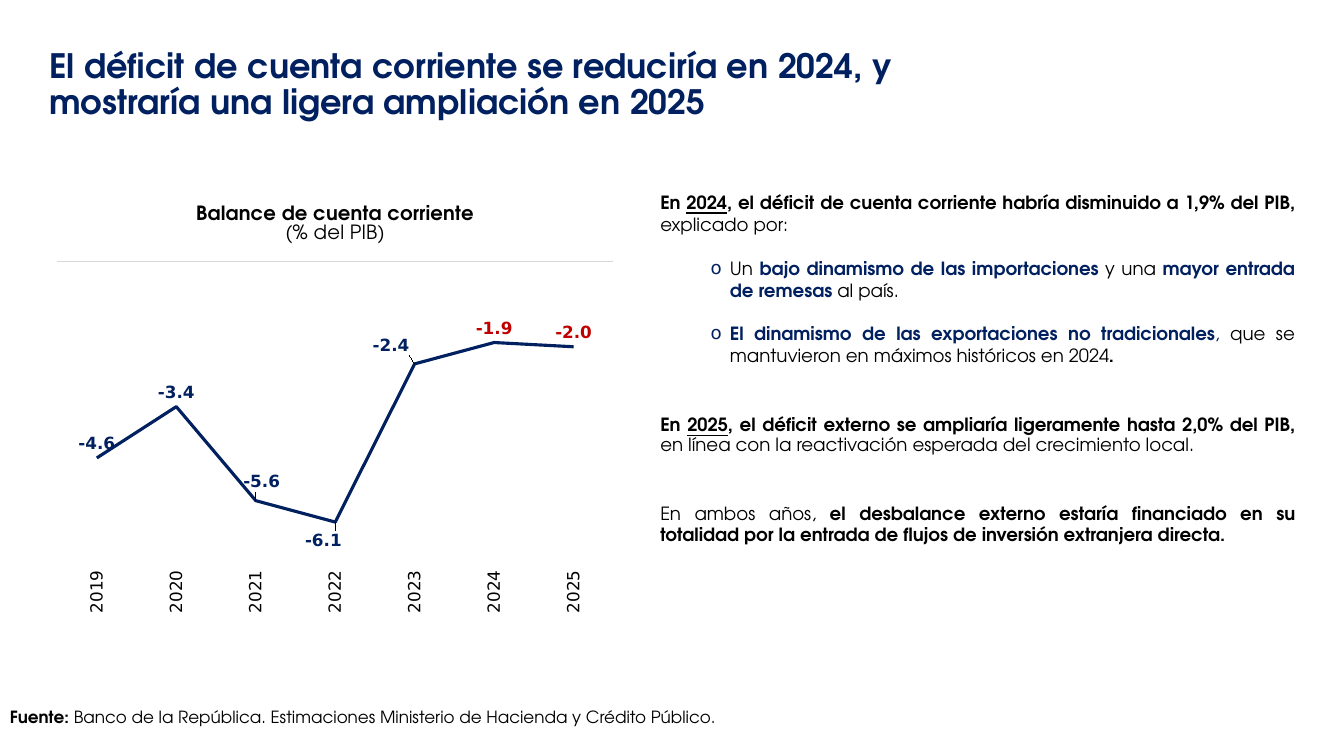
from lxml import etree
from pptx import Presentation
from pptx.chart.data import CategoryChartData
from pptx.dml.color import RGBColor
from pptx.enum.chart import XL_CHART_TYPE, XL_LABEL_POSITION, XL_TICK_LABEL_POSITION, XL_TICK_MARK
from pptx.enum.text import MSO_ANCHOR, MSO_AUTO_SIZE, PP_ALIGN
from pptx.oxml import parse_xml
from pptx.oxml.ns import nsdecls, qn
from pptx.util import Inches, Pt

NAVY = RGBColor(0x00, 0x20, 0x60)
BLACK = RGBColor(0x00, 0x00, 0x00)
RED = RGBColor(0xC0, 0x00, 0x00)
GRAY = RGBColor(0xD9, 0xD9, 0xD9)
TEXT_FONT = "TeX Gyre Adventor"
CHART_FONT = "DejaVu Sans"
LEFT, JUSTIFY = PP_ALIGN.LEFT, PP_ALIGN.JUSTIFY
TOP, MIDDLE = MSO_ANCHOR.TOP, MSO_ANCHOR.MIDDLE
GROW = MSO_AUTO_SIZE.SHAPE_TO_FIT_TEXT
LINE = XL_CHART_TYPE.LINE
ABOVE = XL_LABEL_POSITION.ABOVE
LOW = XL_TICK_LABEL_POSITION.LOW
NO_TICK = XL_TICK_MARK.NONE

BALANCE = {"2019": -4.6, "2020": -3.4, "2021": -5.6, "2022": -6.1,
           "2023": -2.4, "2024": -1.9, "2025": -2.0}
FORECAST_YEARS = ("2024", "2025")
LABEL_SHIFTS = {"2021": (0.01, -0.01), "2022": (-0.02, 0.07), "2023": (-0.04, -0.01)}


class Page:
    """Holds the text style and the current slide, and adds elements to it."""

    def __init__(self, slide, font):
        self.shapes = slide.shapes
        self.font = font

    def style(self, font, name, size, color, bold=False):
        font.name, font.size, font.bold = name, Pt(size), bold
        font.color.rgb = color

    def text(self, place, paragraphs, size, color=BLACK, align=LEFT, anchor=TOP,
             spacing=1.0, gap=0, grow=False):
        box = self.shapes.add_textbox(*map(Inches, place))
        frame = box.text_frame
        frame.word_wrap = True
        frame.vertical_anchor = anchor
        if grow:
            frame.auto_size = GROW
        for index, (bulleted, spans) in enumerate(paragraphs):
            para = frame.paragraphs[0] if index == 0 else frame.add_paragraph()
            para.alignment = align
            para.line_spacing = spacing
            if index:
                para.space_before = Pt(gap)
            if bulleted:
                self.bullet(para)
            self.style(para.font, self.font, size, color)
            for words, *marks in spans:
                span = para.add_run()
                span.text = words
                if "bold" in marks:
                    span.font.bold = True
                if "underline" in marks:
                    span.font.underline = True
                if "navy" in marks:
                    span.font.color.rgb = NAVY

    def bullet(self, para):
        para.level = 1
        properties = para._p.get_or_add_pPr()
        properties.set("marL", str(Inches(0.69)))
        properties.set("indent", str(-Inches(0.19)))
        color = etree.SubElement(properties, qn("a:buClr"))
        etree.SubElement(color, qn("a:srgbClr"), val=str(NAVY))
        etree.SubElement(properties, qn("a:buFont"), typeface=CHART_FONT)
        etree.SubElement(properties, qn("a:buChar"), char="o")

    def layout(self, x, y, size=None):
        parts = [("x", x), ("y", y)]
        modes = ""
        if size:
            modes = '<c:layoutTarget val="inner"/><c:xMode val="edge"/><c:yMode val="edge"/>'
            parts += zip("wh", size)
        values = "".join(f'<c:{name} val="{value}"/>' for name, value in parts)
        return parse_xml(f'<c:layout {nsdecls("c")}><c:manualLayout>{modes}{values}'
                         '</c:manualLayout></c:layout>')

    def line_chart(self, place, title_lines, values):
        data = CategoryChartData(number_format="0.0")
        data.categories = list(values)
        data.add_series("Series 1", list(values.values()))
        chart = self.shapes.add_chart(LINE, *map(Inches, place), data).chart
        self.style(chart.font, CHART_FONT, 12, BLACK)
        chart.has_legend = False
        self.chart_title(chart, title_lines)
        self.chart_axes(chart)
        area = chart._chartSpace.chart.plotArea
        for old in area.findall(qn("c:layout")):
            area.remove(old)
        area.insert(0, self.layout(0.03, 0.16, (0.94, 0.64)))
        self.chart_series(chart.plots[0], list(values))

    def chart_title(self, chart, lines):
        frame = chart.chart_title.text_frame
        chart.chart_title.include_in_layout = False
        for index, words in enumerate(lines):
            para = frame.paragraphs[0] if index == 0 else frame.add_paragraph()
            para.line_spacing = 0.8
            self.style(para.font, self.font, 14, BLACK, bold=index == 0)
            para.add_run().text = words

    def chart_axes(self, chart):
        years, scale = chart.category_axis, chart.value_axis
        years.tick_label_position = LOW
        years.major_tick_mark = NO_TICK
        years.format.line.color.rgb = GRAY
        years.format.line.width = Pt(0.75)
        self.style(years.tick_labels.font, CHART_FONT, 12, BLACK)
        body = years._element.find(qn("c:txPr")).find(qn("a:bodyPr"))
        body.set("rot", "-5400000")
        body.set("vert", "horz")
        scale.minimum_scale, scale.maximum_scale = -7, 0
        scale.has_major_gridlines = False
        scale.visible = False

    def chart_series(self, plot, years):
        plot.vary_by_categories = False
        series = plot.series[0]
        series.smooth = False
        series.format.line.color.rgb = NAVY
        series.format.line.width = Pt(2.25)
        labels = series.data_labels
        labels.show_value = True
        labels.number_format, labels.number_format_is_linked = "0.0", False
        labels.position = ABOVE
        self.style(labels.font, CHART_FONT, 12, NAVY, bold=True)
        for index, year in enumerate(years):
            if year not in FORECAST_YEARS and year not in LABEL_SHIFTS:
                continue
            label = series.points[index].data_label
            color = RED if year in FORECAST_YEARS else NAVY
            self.style(label.font, CHART_FONT, 12, color, bold=True)
            label.position = ABOVE
            if year in LABEL_SHIFTS:
                label._get_or_add_dLbl().insert(1, self.layout(*LABEL_SHIFTS[year]))


def main():
    deck = Presentation()
    deck.slide_width, deck.slide_height = Inches(13.33), Inches(7.5)
    page = Page(deck.slides.add_slide(deck.slide_layouts[6]), TEXT_FONT)

    page.text((0.39, 0.17, 9.27, 1.36), [(False, [
        ("El déficit de cuenta corriente se reduciría en 2024, y mostraría una ligera "
         "ampliación en 2025", "bold")])],
        24, color=NAVY, anchor=MIDDLE, spacing=0.9)
    page.line_chart((0.39, 1.85, 5.87, 4.64),
                    ("Balance de cuenta corriente", "(% del PIB)"), BALANCE)
    page.text((6.45, 1.85, 6.49, 1.85), [
        (False, [("En ", "bold"), ("2024", "bold", "underline"),
                 (", el déficit de cuenta corriente habría disminuido a 1,9% del PIB, ", "bold"),
                 ("explicado por:",)]),
        (True, [("Un ",), ("bajo dinamismo de las importaciones ", "bold", "navy"),
                ("y una ",), ("mayor entrada de remesas ", "bold", "navy"),
                ("al país.",)]),
        (True, [("El dinamismo de las exportaciones no tradicionales", "bold", "navy"),
                (", ", "navy"), ("que se mantuvieron en máximos históricos en 2024",),
                (".", "bold")])],
        13, align=JUSTIFY, gap=15.6, grow=True)
    page.text((6.45, 4.08, 6.49, 0.59), [(False, [
        ("En ", "bold"), ("2025", "bold", "underline"),
        (", el déficit externo se ampliaría ligeramente hasta 2,0% del PIB, ", "bold"),
        ("en línea con la reactivación esperada del crecimiento local.",)])],
        13, align=JUSTIFY, spacing=0.9)
    page.text((6.45, 4.93, 6.49, 0.54), [(False, [
        ("En ambos años, ",),
        ("el desbalance externo estaría financiado en su totalidad por la entrada de "
         "flujos de inversión extranjera directa.", "bold")])],
        13, align=JUSTIFY, grow=True)
    page.text((0, 6.92, 7.49, 0.4), [(False, [
        ("Fuente: ", "bold"),
        ("Banco de la República. Estimaciones Ministerio de Hacienda y Crédito Público.",)])],
        12, anchor=MIDDLE, spacing=0.9)
    deck.save("out.pptx")


if __name__ == "__main__":
    main()
